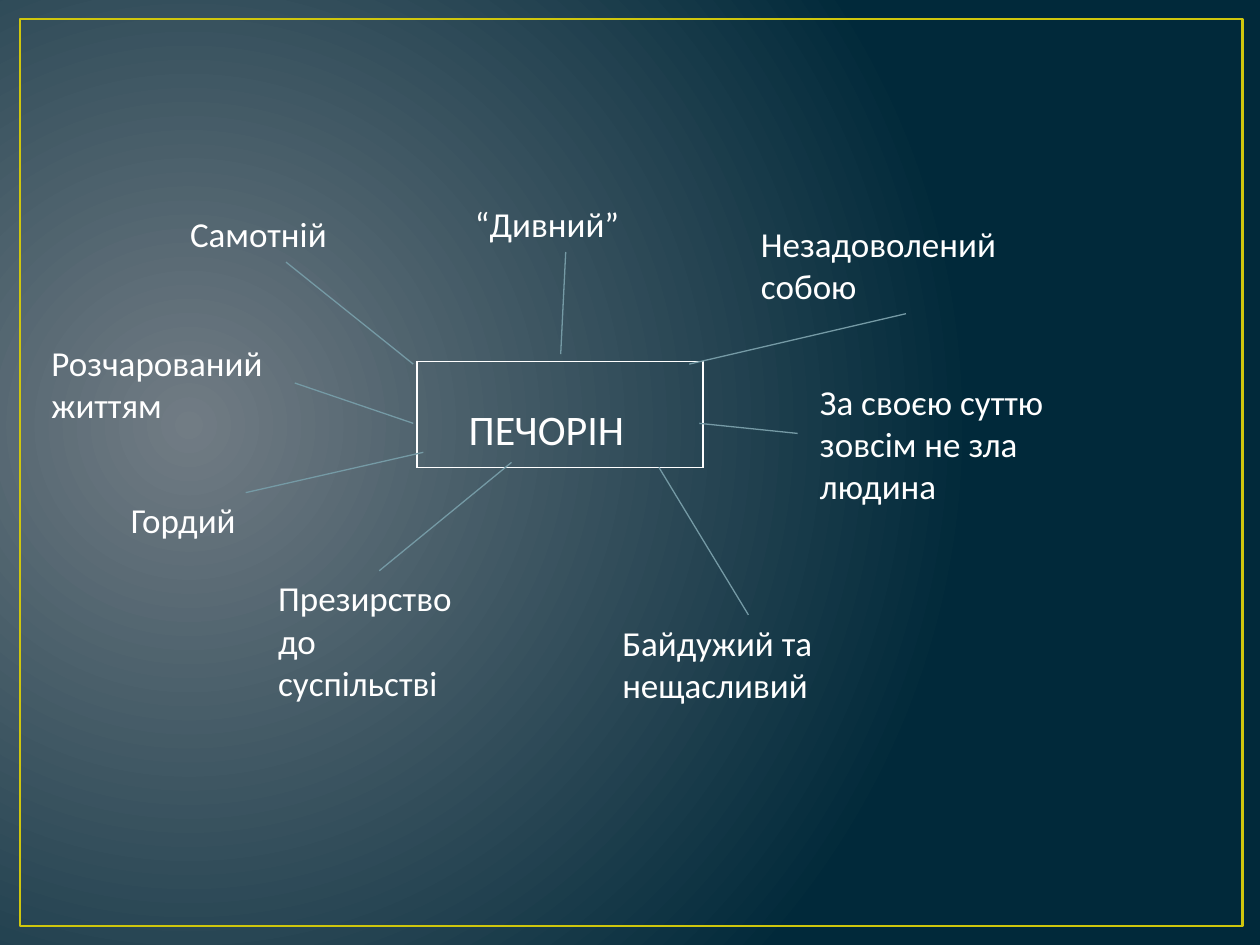
"""Build a mind map of Pechorin's traits around a central name."""
from typing import NamedTuple

from lxml import etree
from pptx import Presentation
from pptx.dml.color import RGBColor
from pptx.enum import shapes, text
from pptx.oxml.ns import qn
from pptx.util import Inches, Pt

WHITE, GOLD, STEEL = "FFFFFF", "CFC60D", "759AA5"


class Trait(NamedTuple):
    words: str
    left: float
    top: float
    width: float
    height: float
    start: tuple[float, float]
    end: tuple[float, float]
    inset: float = 0.1


TRAITS = [
    Trait("Самотній", 1.41, 1.64, 1.72, 0.44, (2.27, 2.08), (3.28, 2.89)),
    Trait("Розчарований життям", 0.31, 2.66, 2.03, 0.77, (2.34, 3.04), (3.28, 3.36)),
    Trait("Гордий", 0.94, 3.91, 1.95, 0.44, (1.95, 3.91), (3.36, 3.59)),
    Trait("Презирство до суспільстві", 2.11, 4.53, 1.8, 1.11, (3.01, 4.53), (4.06, 3.67)),
    Trait("Байдужий та нещасливий", 4.84, 4.88, 2.19, 0.77, (5.94, 4.88), (5.23, 3.71)),
    Trait("“Дивний”", 3.36, 1.56, 2.27, 0.44, (4.49, 2), (4.45, 2.81), 0.41),
    Trait("Незадоволений собою", 5.94, 1.72, 2.5, 0.77, (7.19, 2.49), (5.47, 2.89)),
    Trait("За своєю суттю зовсім не зла людина", 6.41, 2.97, 2.34, 1.11,
          (6.33, 3.44), (5.55, 3.36)),
]


def color(code: str) -> RGBColor:
    return RGBColor.from_string(code)


def write(frame, words: str, size: float) -> None:
    frame.text = words
    font = frame.paragraphs[0].runs[0].font
    font.name, font.size = "Calibri", Pt(size)
    font.color.rgb = color(WHITE)


def paint(slide) -> None:
    fill = slide.background.fill
    fill.gradient()
    for stop, code in zip(fill.gradient_stops, ("717C84", "01293A")):
        stop.color.rgb = color(code)
    grad = slide.element.find(".//" + qn("a:gradFill"))
    grad.remove(grad.find(qn("a:lin")))
    glow = etree.SubElement(grad, qn("a:path"), path="circle")
    etree.SubElement(glow, qn("a:fillToRect"), l="15000", t="50000", r="85000", b="60000")


def frame(slide) -> None:
    box = slide.shapes.add_shape(shapes.MSO_SHAPE.RECTANGLE, Inches(0.16), Inches(0.15),
                                 Inches(9.7), Inches(7.2))
    box.shadow.inherit = False
    box.fill.background()
    box.line.color.rgb = color(GOLD)
    box.line.width = Pt(1.5)


def center(slide, words: str) -> None:
    table = slide.shapes.add_table(1, 1, Inches(3.31), Inches(2.87),
                                   Inches(2.27), Inches(0.84)).table
    table.first_row = table.horz_banding = False
    cell = table.cell(0, 0)
    cell.margin_left, cell.margin_top = Inches(0.41), Inches(0.35)
    write(cell.text_frame, words, 24)
    cell.fill.background()
    props = cell._tc.get_or_add_tcPr()
    for i, side in enumerate(("lnL", "lnR", "lnT", "lnB")):
        edge = etree.Element(qn("a:" + side), w=str(Pt(1)))
        fill = etree.SubElement(edge, qn("a:solidFill"))
        etree.SubElement(fill, qn("a:srgbClr"), val=WHITE)
        props.insert(i, edge)


def label(slide, trait: Trait) -> None:
    box = slide.shapes.add_textbox(Inches(trait.left), Inches(trait.top),
                                   Inches(trait.width), Inches(trait.height))
    body = box.text_frame
    body.word_wrap = True
    body.auto_size = text.MSO_AUTO_SIZE.SHAPE_TO_FIT_TEXT
    body.margin_left = Inches(trait.inset)
    write(body, trait.words, 20)


def link(slide, trait: Trait) -> None:
    ends = [Inches(n) for n in trait.start + trait.end]
    line = slide.shapes.add_connector(shapes.MSO_CONNECTOR.STRAIGHT, *ends)
    line.line.color.rgb = color(STEEL)
    line.line.width = Pt(0.75)
    etree.SubElement(line.element.spPr, qn("a:effectLst"))


def main() -> None:
    deck = Presentation()
    deck.slide_width, deck.slide_height = Inches(10), Inches(7.5)
    slide = deck.slides.add_slide(deck.slide_layouts[6])
    paint(slide)
    frame(slide)
    center(slide, "ПЕЧОРІН")
    for trait in TRAITS:
        label(slide, trait)
    for trait in TRAITS:
        link(slide, trait)
    deck.save("out.pptx")


if __name__ == "__main__":
    main()
